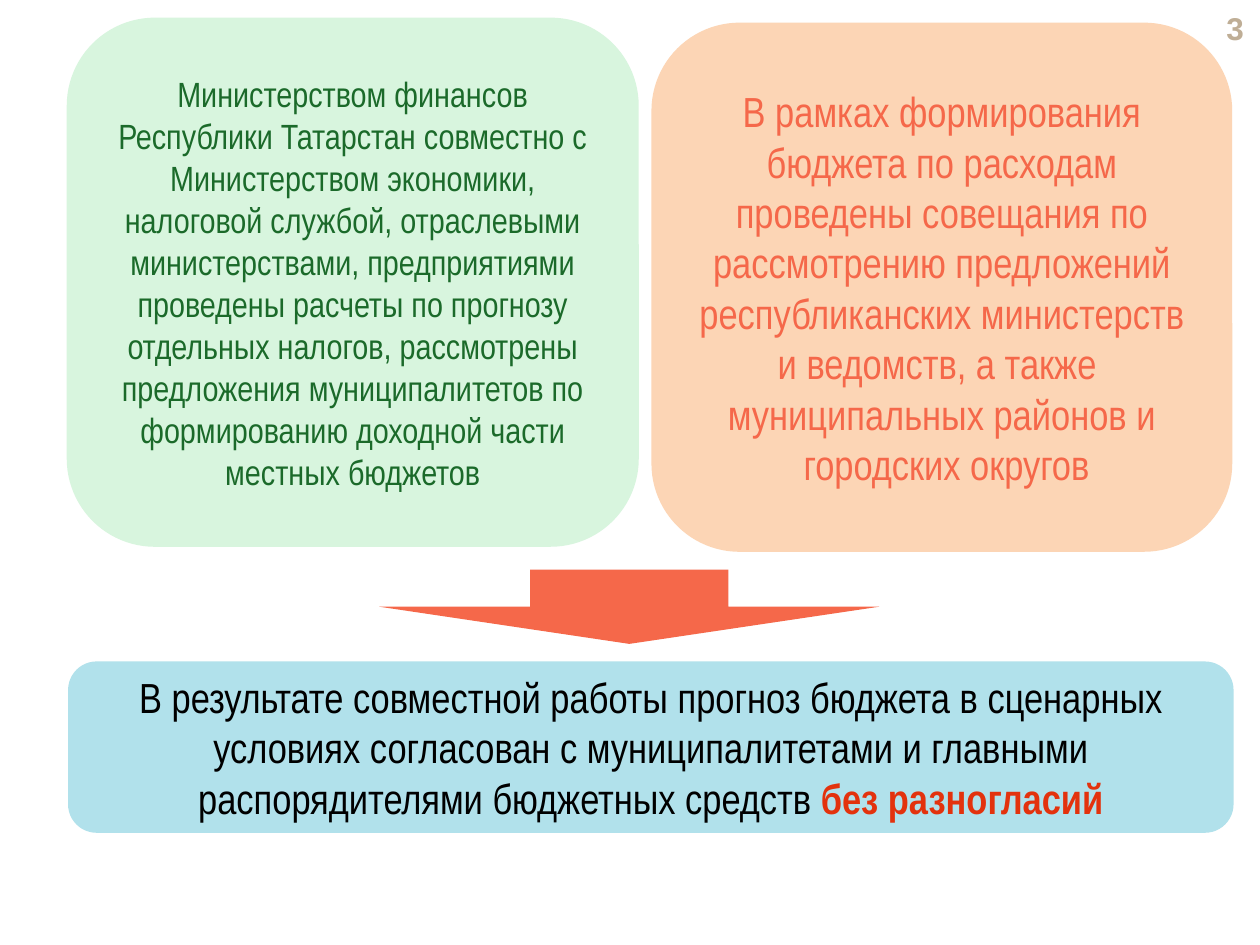
from pptx import Presentation
from pptx.dml.color import RGBColor
from pptx.enum.shapes import MSO_SHAPE
from pptx.enum.text import MSO_ANCHOR, PP_ALIGN
from pptx.util import Inches, Pt

WIDTH, HEIGHT = 10, 7.5
COLORS = {
    "mint": "D8F5DE", "green": "1B6A2A", "peach": "FCD5B5", "coral": "F5684A",
    "sky": "B1E1EB", "black": "000000", "red": "E3320D", "sand": "BFAE96",
}
BODY = {"name": "Arial Narrow", "bold": False}

INCOME = [[("Министерством финансов Республики Татарстан совместно с Министерством экономики, "
            "налоговой службой, отраслевыми министерствами, предприятиями проведены расчеты "
            "по прогнозу отдельных налогов, рассмотрены предложения муниципалитетов по "
            "формированию доходной части местных бюджетов",
            "green", {**BODY, "size": Pt(20)})]]
SPENDING = [[(line, "coral", {**BODY, "size": Pt(24)})] for line in (
    "В рамках формирования бюджета по расходам проведены совещания по рассмотрению "
    "предложений республиканских министерств и ведомств, а также ",
    "муниципальных районов и",
    " городских округов",
)]
RESULT = [[
    ("В результате совместной работы прогноз бюджета в сценарных условиях согласован "
     "с муниципалитетами и главными распорядителями бюджетных средств ",
     "black", {**BODY, "size": Pt(24)}),
    ("без разногласий", "red", {**BODY, "size": Pt(24), "bold": True}),
]]
NUMBER = [[("3", "sand", {"name": "Arial", "size": Pt(18), "bold": True})]]

CARDS = [
    ((0.053, 0.0187, 0.454, 0.56), "mint", INCOME),
    ((0.054, 0.7, 0.925, 0.1813), "sky", RESULT),
    ((0.517, 0.024, 0.461, 0.56), "peach", SPENDING),
]
ARROW_AREA = (0.301, 0.6027, 0.397, 0.0787)
ARROW_ADJUSTMENTS = (0.396, 0.5)
NUMBER_AREA = (0.933, 0.0067, 0.064, 0.0453)


def place(area):
    return [Inches(share * side) for share, side in zip(area, (WIDTH, HEIGHT) * 2)]


def write(shape, lines, alignment):
    frame = shape.text_frame
    for name, value in {"word_wrap": True, "vertical_anchor": MSO_ANCHOR.MIDDLE}.items():
        setattr(frame, name, value)
    paragraph = frame.paragraphs[0]
    paragraph.alignment = alignment
    for index, line in enumerate(lines):
        if index:
            paragraph.add_line_break()
        for text, color, formats in line:
            run = paragraph.add_run()
            run.text = text
            run.font.color.rgb = RGBColor.from_string(COLORS[color])
            for name, value in formats.items():
                setattr(run.font, name, value)


def add_filled(slide, preset, area, color):
    shape = slide.shapes.add_shape(preset, *place(area))
    shape.shadow.inherit = False
    shape.fill.solid()
    shape.fill.fore_color.rgb = RGBColor.from_string(COLORS[color])
    shape.line.fill.background()
    return shape


def main():
    presentation = Presentation()
    presentation.slide_width, presentation.slide_height = Inches(WIDTH), Inches(HEIGHT)
    slide = presentation.slides.add_slide(presentation.slide_layouts[6])

    number = slide.shapes.add_textbox(*place(NUMBER_AREA))
    write(number, NUMBER, PP_ALIGN.RIGHT)

    for area, color, lines in CARDS:
        card = add_filled(slide, MSO_SHAPE.ROUNDED_RECTANGLE, area, color)
        write(card, lines, PP_ALIGN.CENTER)

    arrow = add_filled(slide, MSO_SHAPE.DOWN_ARROW, ARROW_AREA, "coral")
    for index, value in enumerate(ARROW_ADJUSTMENTS):
        arrow.adjustments[index] = value

    presentation.save("out.pptx")


if __name__ == "__main__":
    main()
